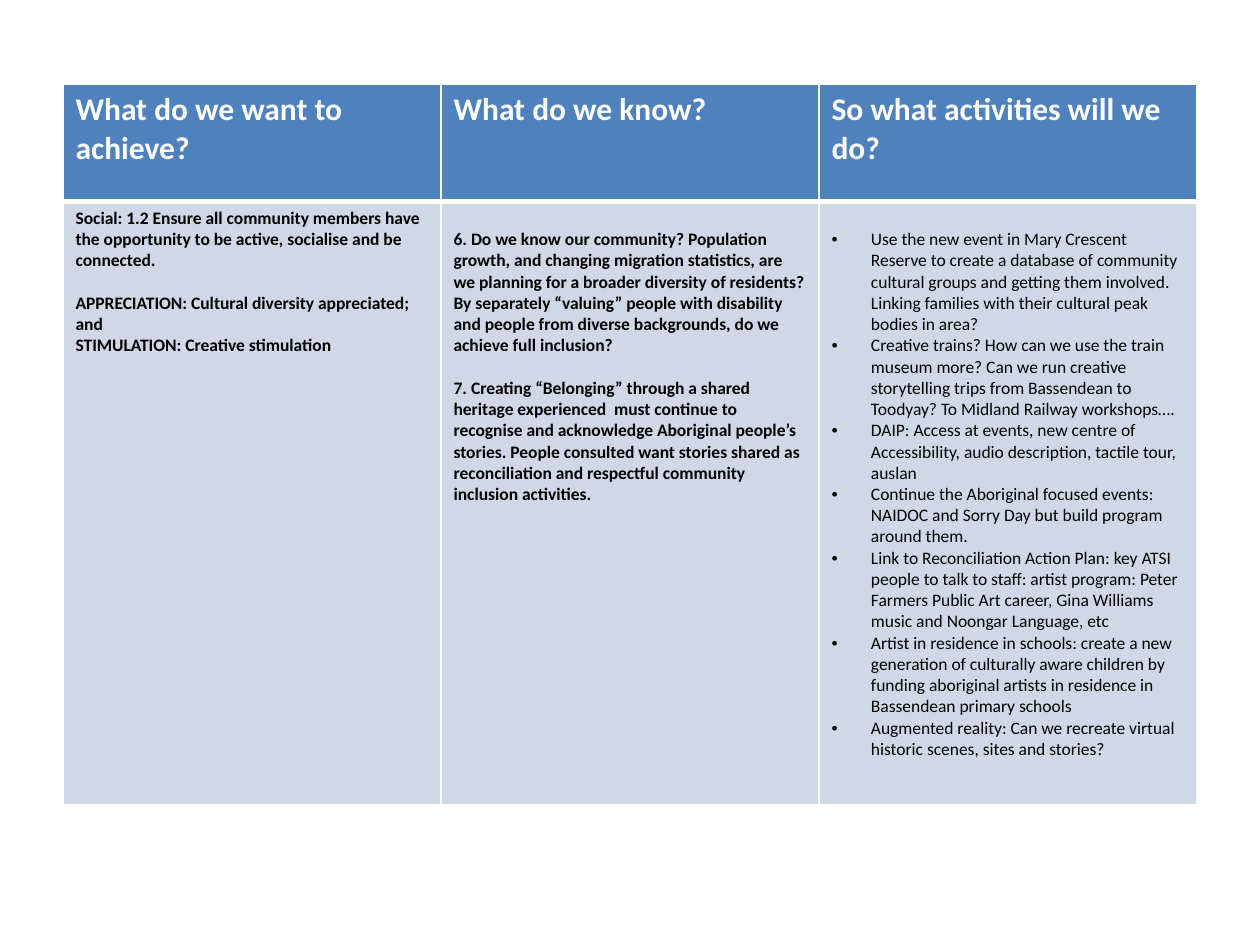
import pptx
import pptx.util
import pptx.dml.color
import pptx.oxml.ns
import lxml.etree

Pt = pptx.util.Pt
qn = pptx.oxml.ns.qn

HEADS = ["What do we want to achieve?", "What do we know?", "So what activities will we do?"]
GOALS = [
    "Social: 1.2 Ensure all community members have the opportunity to be active, socialise and be connected.",
    "APPRECIATION: Cultural diversity appreciated; and",
    "STIMULATION: Creative stimulation",
]
FACTS = [
    "6. Do we know our community? Population growth, and changing migration statistics, are we planning for a broader diversity of residents?",
    "By separately “valuing” people with disability and people from diverse backgrounds, do we achieve full inclusion?",
    "7. Creating “Belonging” through a shared heritage experienced  must continue to recognise and acknowledge Aboriginal people’s stories. People consulted want stories shared as reconciliation and respectful community inclusion activities.",
]
ACTS = [
    "Use the new event in Mary Crescent Reserve to create a database of community cultural groups and getting them involved. Linking families with their cultural peak bodies in area?",
    "Creative trains? How can we use the train museum more? Can we run creative storytelling trips from Bassendean to Toodyay? To Midland Railway workshops….",
    "DAIP: Access at events, new centre of Accessibility, audio description, tactile tour, auslan",
    "Continue the Aboriginal focused events: NAIDOC and Sorry Day but build program around them.",
    "Link to Reconciliation Action Plan: key ATSI people to talk to staff: artist program: Peter Farmers Public Art career, Gina Williams music and Noongar Language, etc",
    "Artist in residence in schools: create a new generation of culturally aware children by funding aboriginal artists in residence in Bassendean primary schools",
    "Augmented reality: Can we recreate virtual historic scenes, sites and stories?",
]


def tint(code):
    return pptx.dml.color.RGBColor.from_string(code)


class Deck:
    font = "Calibri"
    white = "FFFFFF"
    black = "000000"
    blue = "4F81BD"
    pale = "D0D8E8"
    gap = 12.2
    inset = 3.6
    indent = 22.5

    def __init__(self, wide, high):
        self.file = pptx.Presentation()
        self.file.slide_width = Pt(wide)
        self.file.slide_height = Pt(high)
        self.slide = self.file.slides.add_slide(self.file.slide_layouts[6])

    def grid(self, left, top, cols, rows):
        frame = self.slide.shapes.add_table(
            len(rows), len(cols), Pt(left), Pt(top), Pt(sum(cols)), Pt(sum(rows)))
        table = frame.table
        for col, wide in zip(table.columns, cols):
            col.width = Pt(wide)
        for row, high in zip(table.rows, rows):
            row.height = Pt(high)
        return table

    def edge(self, cell, sides):
        props = cell._tc.get_or_add_tcPr()
        for side, width in sides.items():
            line = lxml.etree.SubElement(props, qn("a:ln" + side), w=str(int(Pt(width))))
            fill = lxml.etree.SubElement(line, qn("a:solidFill"))
            lxml.etree.SubElement(fill, qn("a:srgbClr"), val=self.white)

    def bullet(self, para):
        props = para._p.get_or_add_pPr()
        props.set("marL", str(int(Pt(self.indent))))
        props.set("indent", str(int(Pt(-self.indent))))
        lxml.etree.SubElement(props, qn("a:buFont"), typeface="Arial")
        lxml.etree.SubElement(props, qn("a:buChar"), char="•")

    def cell(self, cell, lines, size, color, fill, sides, bold=True, drop=0, breaks=(), dots=False):
        self.edge(cell, sides)
        cell.fill.solid()
        cell.fill.fore_color.rgb = tint(fill)
        cell.margin_top = Pt(self.inset + drop)
        cell.text_frame.text = "\n".join(lines)
        for spot, para in enumerate(cell.text_frame.paragraphs):
            if spot in breaks:
                para.space_before = Pt(self.gap)
            if dots:
                self.bullet(para)
            for run in para.runs:
                run.font.name = self.font
                run.font.size = Pt(size)
                run.font.bold = bold
                run.font.color.rgb = tint(color)

    def head(self, cell, text):
        self.cell(cell, [text], 18, self.white, self.blue, {"L": 1, "R": 1, "T": 1, "B": 3})

    def body(self, cell, lines, **more):
        self.cell(cell, lines, 10, self.black, self.pale, {"L": 1, "R": 1, "T": 3, "B": 1}, **more)


def main():
    deck = Deck(720, 540)
    table = deck.grid(36, 48.2, [216] * 3, [67, 344.5])
    for col, text in enumerate(HEADS):
        deck.head(table.cell(0, col), text)
    deck.body(table.cell(1, 0), GOALS, breaks=[1])
    deck.body(table.cell(1, 1), FACTS, drop=deck.gap, breaks=[2])
    deck.body(table.cell(1, 2), ACTS, drop=deck.gap, bold=False, dots=True)
    deck.file.save("out.pptx")


if __name__ == "__main__":
    main()
